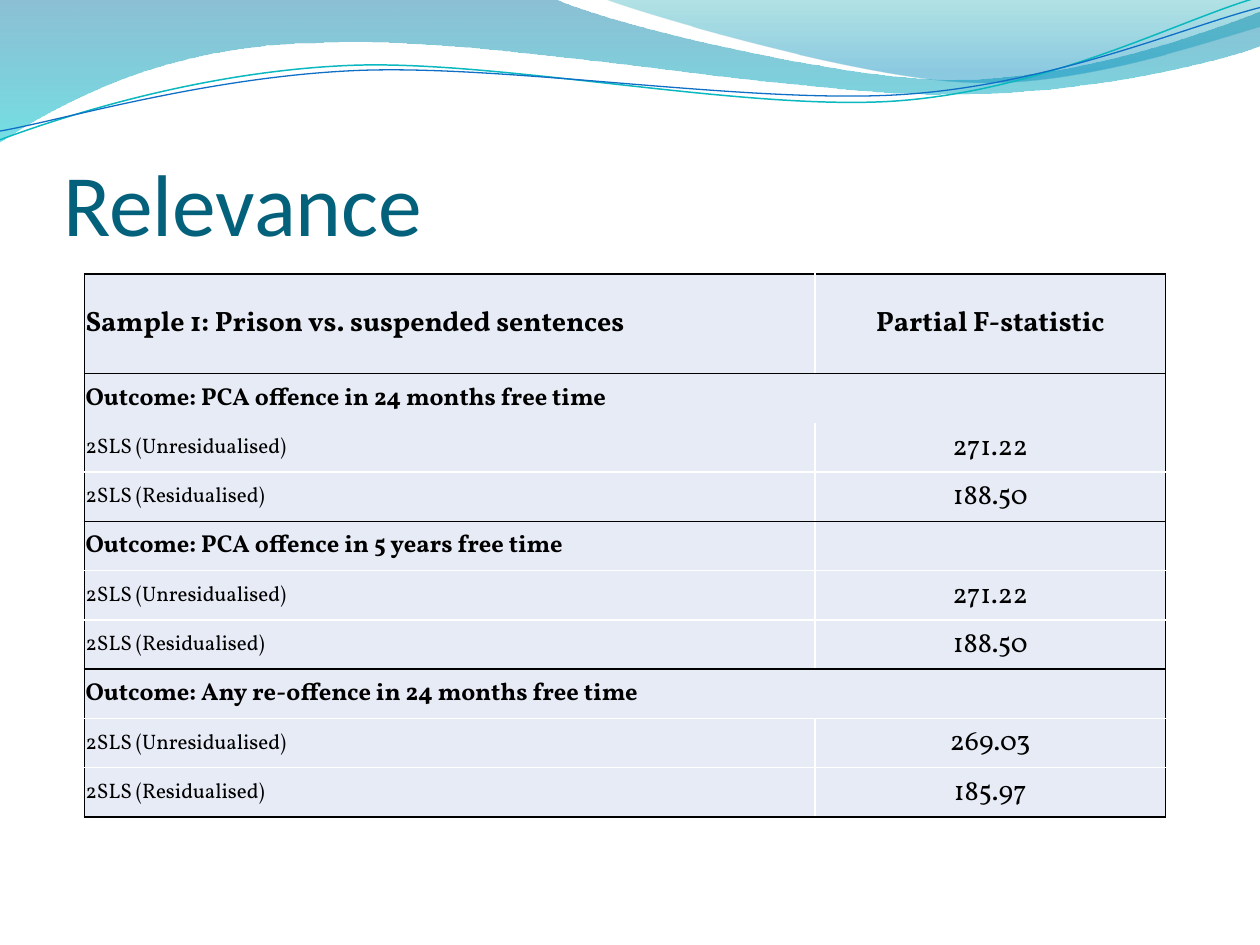
import math

from lxml import etree
from pptx import Presentation
from pptx.dml.color import RGBColor
from pptx.enum.text import MSO_ANCHOR, MSO_AUTO_SIZE, PP_ALIGN
from pptx.oxml.ns import qn
from pptx.util import Pt

MIDDLE, BOTTOM = MSO_ANCHOR.MIDDLE, MSO_ANCHOR.BOTTOM
LEFT, CENTER = PP_ALIGN.LEFT, PP_ALIGN.CENTER
NO_AUTOFIT = MSO_AUTO_SIZE.NONE

BLACK, WHITE, CELL_FILL = "000000", "FFFFFF", "E7EBF5"
LINE_ROTATION = -2.7

BACK_WAVE = [
    [(0, -0.7)],
    [(316.8, -0.7)],
    [(342.7, 12.2), (478.1, 45.4), (545.8, 45.4)],
    [(614.2, 45.4), (689.8, 18.7), (720, 6.5)],
    [(720.7, 25.9)],
    [(707.8, 31.7), (626.4, 54.7), (537.1, 54)],
    [(447.8, 54), (275, 20.2), (185, 24.5)],
    [(92.9, 25.2), (33.1, 59.8), (-0.7, 81.4)],
]
FRONT_WAVE = [
    [(344.9, -0.7)],
    [(366.5, 7.9), (491, 44.6), (553.7, 46.8)],
    [(616.3, 49.7), (691.9, 23), (720, 15.1)],
    [(720, 0)],
]
TEAL_LINE = [
    [(0, 79.9)],
    [(34.6, 67), (113.8, 41), (199.4, 37.4)],
    [(284.4, 33.8), (427, 64.1), (513.4, 57.6)],
    [(599.8, 51.1), (675.4, 10.8), (718.6, -1.4)],
]
BLUE_LINE = [
    [(0, 74.9)],
    [(33.8, 69.1), (118.1, 43.9), (203.8, 40.3)],
    [(290.2, 36.7), (429.8, 59.8), (516.2, 54)],
    [(601.9, 48.2), (677.5, 15.1), (720, 4.3)],
]

HEADINGS = ("Sample 1: Prison vs. suspended sentences", "Partial F-statistic")
MODELS = ("2SLS (Unresidualised)", "2SLS (Residualised)")
OUTCOMES = [
    ("Outcome: PCA offence in 24 months free time", ("271.22", "188.50"), "open"),
    ("Outcome: PCA offence in 5 years free time", ("271.22", "188.50"), "divided"),
    ("Outcome: Any re-offence in 24 months free time", ("269.03", "185.97"), "merged"),
]
DIVIDERS = {"open": None, "divided": WHITE, "merged": BLACK}


def color(value):
    return RGBColor.from_string(value)


def turn(point, degrees, center):
    cosine, sine = math.cos(math.radians(degrees)), math.sin(math.radians(degrees))
    dx, dy = point[0] - center[0], point[1] - center[1]
    return center[0] + dx * cosine - dy * sine, center[1] + dx * sine + dy * cosine


def add_curve(slide, segments, box, close):
    left, top, width, height = box
    builder = slide.shapes.build_freeform(Pt(left), Pt(top))
    builder.add_line_segments([(Pt(left + width), Pt(top + height))], close=False)
    shape = builder.convert_to_shape()
    shape.shadow.inherit = False
    outline = next(shape.element.iter(qn("a:path")))
    for command in list(outline):
        outline.remove(command)
    for index, segment in enumerate(segments):
        name = "moveTo" if index == 0 else "lnTo" if len(segment) == 1 else "cubicBezTo"
        command = etree.SubElement(outline, qn("a:" + name))
        for x, y in segment:
            etree.SubElement(command, qn("a:pt"), x=str(Pt(x - left)), y=str(Pt(y - top)))
    if close:
        etree.SubElement(outline, qn("a:close"))
    return shape


def add_wave(slide, segments, box, stops):
    shape = add_curve(slide, segments, box, True)
    shape.line.fill.background()
    shape.fill.gradient()
    shape.fill.gradient_angle = 270
    for stop, (position, value, _) in zip(shape.fill.gradient_stops, stops):
        stop.position = position
        stop.color.rgb = color(value)
    for node, (_, _, opacity) in zip(shape.element.iter(qn("a:srgbClr")), stops):
        etree.SubElement(node, qn("a:alpha"), val=str(opacity * 1000))


def add_wave_line(slide, segments, box, value, width):
    center = (box[0] + box[2] / 2, box[1] + box[3] / 2)
    level = [[turn(point, -LINE_ROTATION, center) for point in segment]
             for segment in segments]
    shape = add_curve(slide, level, box, False)
    shape.rotation = LINE_ROTATION
    shape.fill.background()
    shape.line.color.rgb = color(value)
    shape.line.width = Pt(width)


def add_wave_band(slide):
    add_wave(slide, BACK_WAVE, (-0.7, -0.7, 721.4, 82.1),
             [(0, "0074A1", 45), (1, "00C6CF", 55)])
    add_wave(slide, FRONT_WAVE, (344.9, -0.7, 375.1, 50.4),
             [(0, "00A1A9", 30), (0.8, "008BBF", 45)])
    add_wave_line(slide, TEAL_LINE, (-1.4, 15.8, 721.4, 51.1), "0AB8BF", 0.85)
    add_wave_line(slide, BLUE_LINE, (-1.4, 21.6, 722.2, 41.8), "0F6FC6", 0.75)


def place_title(slide, text, left, top, width, height):
    title = slide.shapes.title
    slide.shapes.element.append(title.element)
    title.left, title.top, title.width, title.height = map(Pt, (left, top, width, height))
    frame = title.text_frame
    frame.text = text
    frame.auto_size = NO_AUTOFIT
    frame.vertical_anchor = BOTTOM
    frame.margin_left = frame.margin_right = frame.margin_bottom = 0
    frame.margin_top = Pt(3.6)
    paragraph = frame.paragraphs[0]
    paragraph.alignment = LEFT
    font = paragraph.runs[0].font
    font.name, font.size, font.color.rgb = "Calibri", Pt(50), color("04617B")


def set_borders(cell, borders):
    properties = cell._tc.get_or_add_tcPr()
    for side, value in zip("LRTB", borders):
        line = etree.SubElement(properties, qn("a:ln" + side), w=str(Pt(1)))
        if value is None:
            etree.SubElement(line, qn("a:noFill"))
        else:
            fill = etree.SubElement(line, qn("a:solidFill"))
            etree.SubElement(fill, qn("a:srgbClr"), val=value)


def format_cell(cell, text, size, bold, alignment, borders):
    set_borders(cell, borders)
    cell.fill.solid()
    cell.fill.fore_color.rgb = color(CELL_FILL)
    cell.vertical_anchor = MIDDLE
    cell.margin_left = cell.margin_right = cell.margin_top = Pt(0.72)
    cell.margin_bottom = 0
    cell.text_frame.text = text
    paragraph = cell.text_frame.paragraphs[0]
    paragraph.alignment = alignment
    for run in paragraph.runs:
        run.font.name, run.font.size, run.font.bold = "Vollkorn", Pt(size), bold
        run.font.color.rgb = color(BLACK)


def fill_row(table, row, texts, sizes, bold, top, bottom, divider=WHITE):
    sides = ((BLACK, divider), (divider, BLACK))
    for column, alignment in enumerate((LEFT, CENTER)):
        format_cell(table.cell(row, column), texts[column], sizes[column], bold,
                    alignment, (*sides[column], top, bottom))


def add_results_table(slide, left, top, column_widths, header_height, row_height):
    row_count = 1 + len(OUTCOMES) * (1 + len(MODELS))
    height = header_height + row_height * (row_count - 1)
    table = slide.shapes.add_table(row_count, 2, Pt(left), Pt(top),
                                   Pt(sum(column_widths)), Pt(height)).table
    table.first_row = table.horz_banding = False
    for column, width in zip(table.columns, column_widths):
        column.width = Pt(width)
    for index, row in enumerate(table.rows):
        row.height = Pt(row_height if index else header_height)

    fill_row(table, 0, HEADINGS, (16, 16), True, BLACK, BLACK)
    row = 1
    for outcome, values, style in OUTCOMES:
        edge = None if style == "open" else WHITE
        fill_row(table, row, (outcome, ""), (14, 14), True, BLACK, edge, DIVIDERS[style])
        if style == "merged":
            table.cell(row, 0).merge(table.cell(row, 1))
        fill_row(table, row + 1, (MODELS[0], values[0]), (12, 16), False, edge, WHITE)
        fill_row(table, row + 2, (MODELS[1], values[1]), (12, 16), False, WHITE, BLACK)
        row += 3


def main():
    presentation = Presentation()
    presentation.slide_width, presentation.slide_height = Pt(720), Pt(540)
    slide = presentation.slides.add_slide(presentation.slide_layouts[5])
    add_wave_band(slide)
    place_title(slide, "Relevance", 36, 55, 654, 90)
    add_results_table(slide, 48.25, 156.5, (417.5, 200.25), 57, 28.17)
    presentation.save("out.pptx")


if __name__ == "__main__":
    main()
